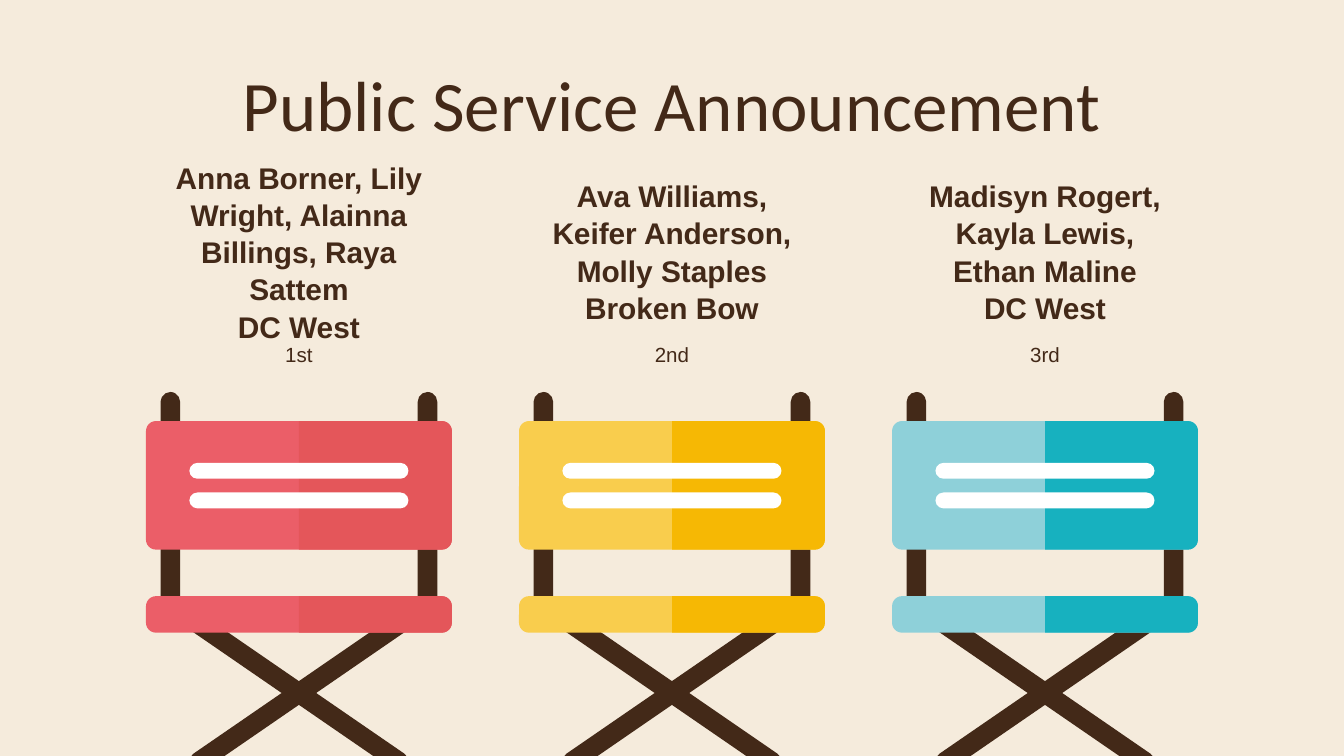
from math import atan2, degrees, hypot

from pptx import Presentation
from pptx.dml.color import RGBColor
from pptx.enum.shapes import MSO_SHAPE as Shape
from pptx.enum.text import MSO_ANCHOR as Anchor, MSO_AUTO_SIZE as AutoSize, PP_ALIGN as Align
from pptx.util import Cm, Pt

# Content: names, school, place, light and dark chair colours
TITLE = "Public Service Announcement"
WINNERS = [
    ("Anna Borner, Lily Wright, Alainna Billings, Raya Sattem", "DC West", "1st", "EB5E68", "E4565A"),
    ("Ava Williams, Keifer Anderson, Molly Staples", "Broken Bow", "2nd", "F9CD4D", "F6B804"),
    ("Madisyn Rogert, Kayla Lewis, Ethan Maline", "DC West", "3rd", "8ED0D9", "17B1BF"),
]
THEME = {
    "background": "F5EBDC", "brown": "432918", "white": "FFFFFF",
    "title_font": "Calibri", "body_font": "Arial",
    "title_size": 38, "names_size": 16, "place_size": 11,
}

# Layout in centimetres
SLIDE_W, SLIDE_H = 25.4, 14.29
PITCH = 7.05
TEXT_W = 5.18
CHAIR_W = 5.78
CORNER = 0.19
BAR = 0.37                               # thickness of posts and legs
POST_OFFSET, POST_TOP, POST_H = 2.43, 7.41, 4.21
LEG_DX, LEG_DY, LEG_MID = 3.78, 2.6, 13.1
PANELS = [(7.96, 2.43), (11.27, 0.69)]   # back and seat: top, height
STRIPE_TOPS, STRIPE_W, STRIPE_H = (8.75, 9.31), 4.14, 0.3


def add_part(kind, cx, cy, w, h, color, radius, rotation=0):
    """Add a rounded shape centred on a point."""
    s = slide.shapes.add_shape(kind, Cm(cx - w / 2), Cm(cy - h / 2), Cm(w), Cm(h))
    s.adjustments[0] = radius / min(w, h)
    s.rotation = rotation
    s.shadow.inherit = False
    s.fill.solid()
    s.fill.fore_color.rgb = RGBColor.from_string(color)
    s.line.fill.background()


def format_text(s, text, font, size, bold=False, anchor=Anchor.MIDDLE, spacing=1.0):
    tf = s.text_frame
    tf.text = text
    tf.word_wrap = True
    tf.auto_size = AutoSize.NONE
    tf.vertical_anchor = anchor
    tf.margin_left = tf.margin_right = tf.margin_top = tf.margin_bottom = Cm(0.25)
    for p in tf.paragraphs:
        p.alignment = Align.CENTER
        p.line_spacing = spacing
        p.font.name = font
        p.font.size = Pt(size)
        p.font.bold = bold
        p.font.color.rgb = RGBColor.from_string(THEME["brown"])


def add_text(cx, top, height, text, size, **options):
    s = slide.shapes.add_textbox(Cm(cx - TEXT_W / 2), Cm(top), Cm(TEXT_W), Cm(height))
    format_text(s, text, THEME["body_font"], size, spacing=1.04, **options)


def add_chair(cx, light, dark):
    # Posts and crossed legs
    for side in (-1, 1):
        add_part(Shape.ROUNDED_RECTANGLE, cx + side * POST_OFFSET, POST_TOP + POST_H / 2,
                 BAR, POST_H, THEME["brown"], BAR / 2)
        add_part(Shape.ROUNDED_RECTANGLE, cx, LEG_MID, hypot(LEG_DX, LEG_DY) + BAR, BAR,
                 THEME["brown"], BAR / 2, side * degrees(atan2(LEG_DY, LEG_DX)))
    # Back and seat, each with a darker right half
    for top, h in PANELS:
        cy = top + h / 2
        add_part(Shape.ROUNDED_RECTANGLE, cx, cy, CHAIR_W, h, light, CORNER)
        add_part(Shape.ROUND_2_SAME_RECTANGLE, cx + CHAIR_W / 4, cy,
                 h, CHAIR_W / 2, dark, CORNER, 90)
    # Stripes on the back
    for top in STRIPE_TOPS:
        add_part(Shape.ROUNDED_RECTANGLE, cx, top + STRIPE_H / 2,
                 STRIPE_W, STRIPE_H, THEME["white"], STRIPE_H / 2)


prs = Presentation()
prs.slide_width, prs.slide_height = Cm(SLIDE_W), Cm(SLIDE_H)
slide = prs.slides.add_slide(prs.slide_layouts[5])
slide.background.fill.solid()
slide.background.fill.fore_color.rgb = RGBColor.from_string(THEME["background"])

# Title
title = slide.shapes.title
title.left, title.top, title.width, title.height = Cm(2), Cm(1.5), Cm(21.4), Cm(0.89)
format_text(title, TITLE, THEME["title_font"], THEME["title_size"])

# One column per winning team
for i, (names, school, place, light, dark) in enumerate(WINNERS):
    cx = SLIDE_W / 2 + (i - 1) * PITCH
    add_text(cx, 4.39, 0.71, f"{names}\n{school}", THEME["names_size"], bold=True)
    add_text(cx, 6.2, 1.88, place, THEME["place_size"], anchor=Anchor.TOP)
    add_chair(cx, light, dark)

prs.save("out.pptx")
